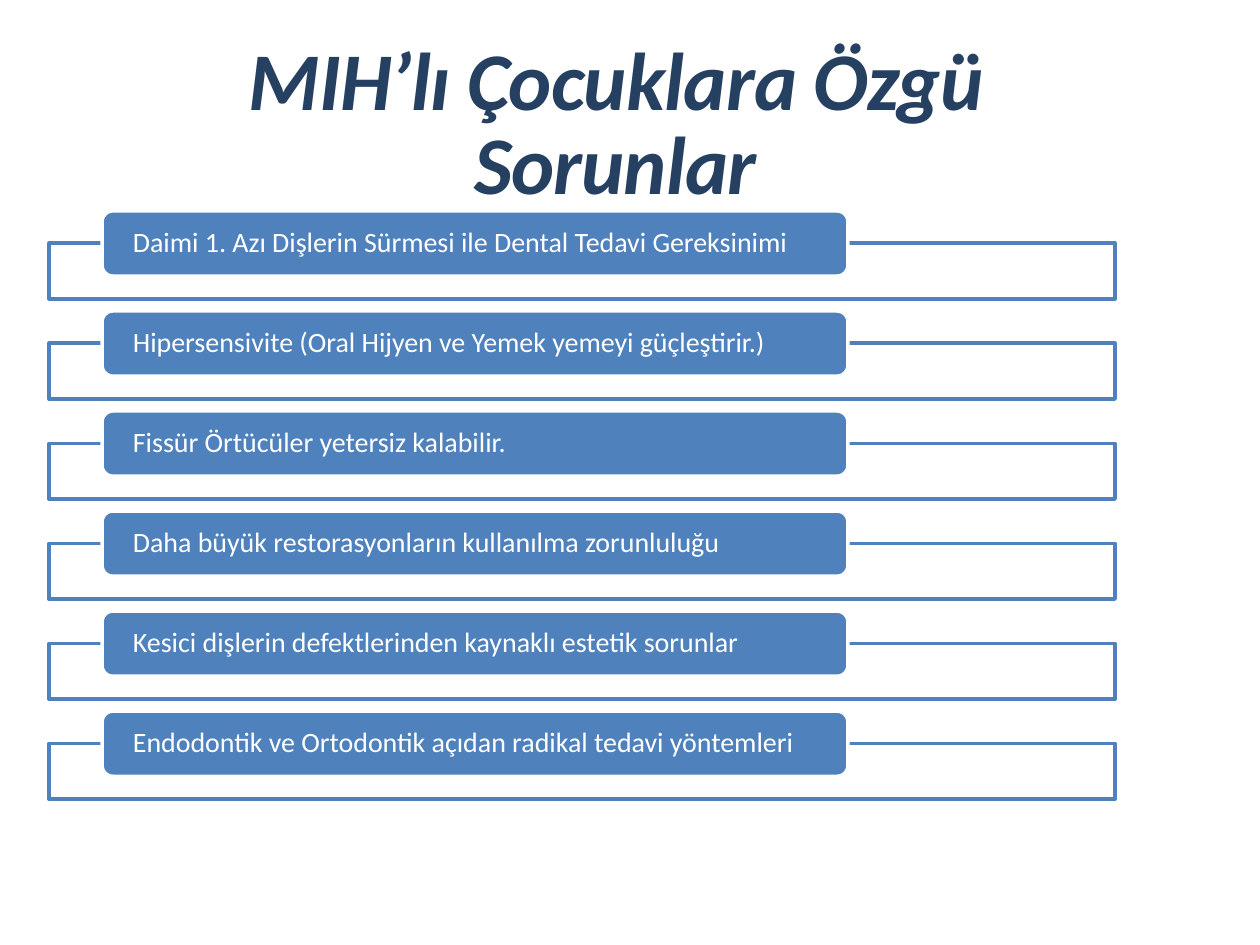
import lxml.etree
import pptx
import pptx.dml.color
import pptx.enum.shapes
import pptx.enum.text
import pptx.oxml.ns
import pptx.util

RGBColor = pptx.dml.color.RGBColor
MSO_SHAPE = pptx.enum.shapes.MSO_SHAPE
MSO_ANCHOR = pptx.enum.text.MSO_ANCHOR
PP_ALIGN = pptx.enum.text.PP_ALIGN

WHITE = RGBColor(0xFF, 0xFF, 0xFF)
BLUE = RGBColor(0x4F, 0x81, 0xBD)
NAVY = RGBColor(0x25, 0x40, 0x61)

COLUMNS, ROWS = 100, 75
FIRST_ROW, ROW_STEP = 16.74, 7.94
PROBLEMS = [
    "Daimi 1. Azı Dişlerin Sürmesi ile Dental Tedavi Gereksinimi",
    "Hipersensivite (Oral Hijyen ve Yemek yemeyi güçleştirir.)",
    "Fissür Örtücüler yetersiz kalabilir.",
    "Daha büyük restorasyonların kullanılma zorunluluğu",
    "Kesici dişlerin defektlerinden kaynaklı estetik sorunlar",
    "Endodontik ve Ortodontik açıdan radikal tedavi yöntemleri",
]


def write(tf, text, size, color, align=PP_ALIGN.LEFT, spacing=0.9,
          anchor=MSO_ANCHOR.TOP, insets=(0.1, 0.05), bold=False,
          italic=False, tracking=0):
    """Put one formatted paragraph into a text frame."""
    tf.word_wrap = True
    tf.vertical_anchor = anchor
    tf.margin_left = tf.margin_right = pptx.util.Inches(insets[0])
    tf.margin_top = tf.margin_bottom = pptx.util.Inches(insets[1])
    p = tf.paragraphs[0]
    p.alignment = align
    p.line_spacing = spacing
    r = p.add_run()
    r.text = text
    r.font.name = "Calibri"
    r.font.size = pptx.util.Pt(size)
    r.font.color.rgb = color
    r.font.bold = bold
    r.font.italic = italic
    if tracking:
        r._r.get_or_add_rPr().set("spc", str(round(tracking * 100)))


class Deck:
    """Holds the style and the current slide, measured in columns and rows."""

    def __init__(self):
        self.prs = pptx.Presentation()
        self.prs.slide_width = pptx.util.Inches(10)
        self.prs.slide_height = pptx.util.Inches(7.5)
        self.s = self.prs.slides.add_slide(self.prs.slide_layouts[6])

    def place(self, left, top, width, height):
        col = self.prs.slide_width / COLUMNS
        row = self.prs.slide_height / ROWS
        return [round(n) for n in (left * col, top * row, width * col, height * row)]

    def box(self, kind, area, fill, line, opacity=100):
        sp = self.s.shapes.add_shape(kind, *self.place(*area))
        sp.shadow.inherit = False
        sp.fill.solid()
        sp.fill.fore_color.rgb = fill
        sp.line.color.rgb = line
        sp.line.width = pptx.util.Pt(2)
        if opacity < 100:
            color = sp._element.spPr.find(".//" + pptx.oxml.ns.qn("a:srgbClr"))
            alpha = lxml.etree.SubElement(color, pptx.oxml.ns.qn("a:alpha"))
            alpha.set("val", str(opacity * 1000))
        return sp

    def problem(self, text, top):
        self.box(MSO_SHAPE.RECTANGLE, (3.9, top + 2.56, 84.6, 4.43), WHITE, BLUE, opacity=90)
        sp = self.box(MSO_SHAPE.ROUNDED_RECTANGLE, (8.1, top, 59.2, 5.17), BLUE, WHITE)
        write(sp.text_frame, text, 16, WHITE, anchor=MSO_ANCHOR.MIDDLE, insets=(0.22, 0))

    def title(self, text):
        sp = self.s.shapes.add_textbox(*self.place(10.1, 3, 77.5, 20))
        write(sp.text_frame, text, 46.8, NAVY, align=PP_ALIGN.CENTER, spacing=0.85,
              bold=True, italic=True, tracking=-0.5)


def main():
    deck = Deck()
    for i, text in enumerate(PROBLEMS):
        deck.problem(text, FIRST_ROW + i * ROW_STEP)
    deck.title("MIH’lı Çocuklara Özgü Sorunlar")
    deck.prs.save("out.pptx")


if __name__ == "__main__":
    main()
